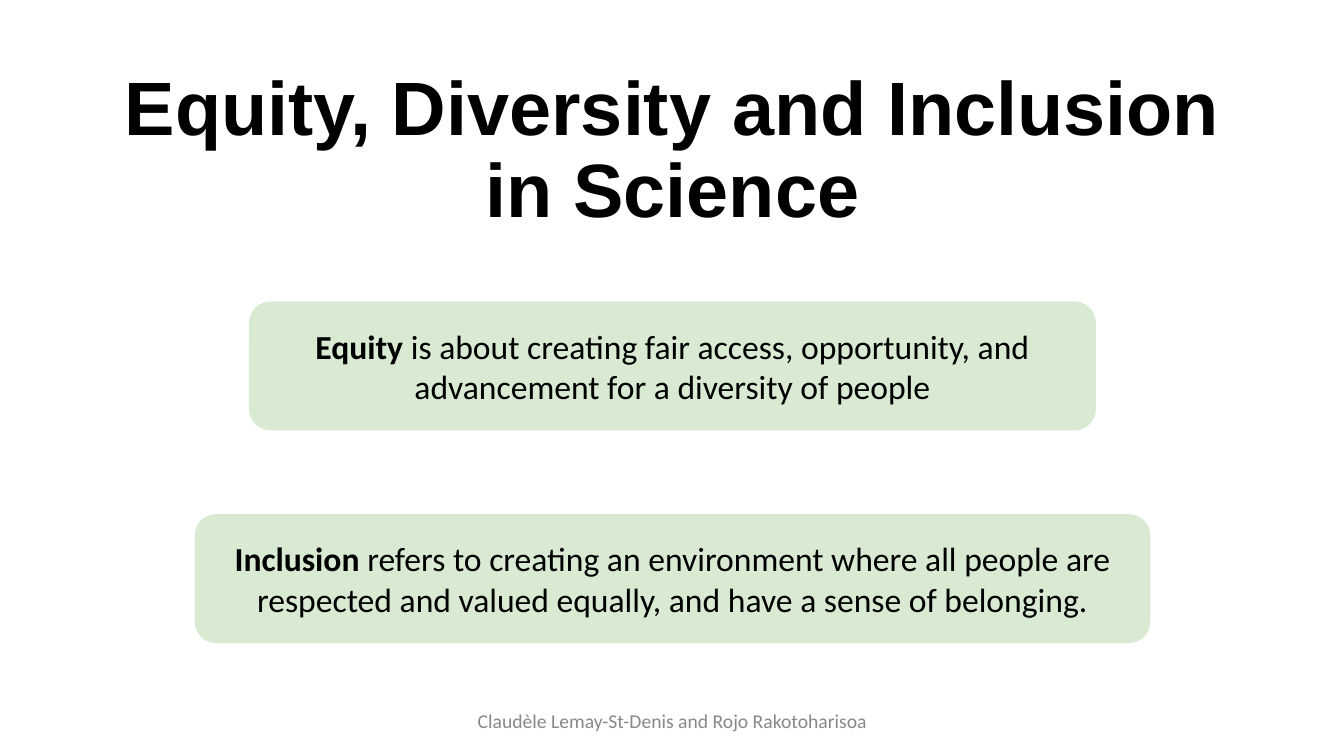
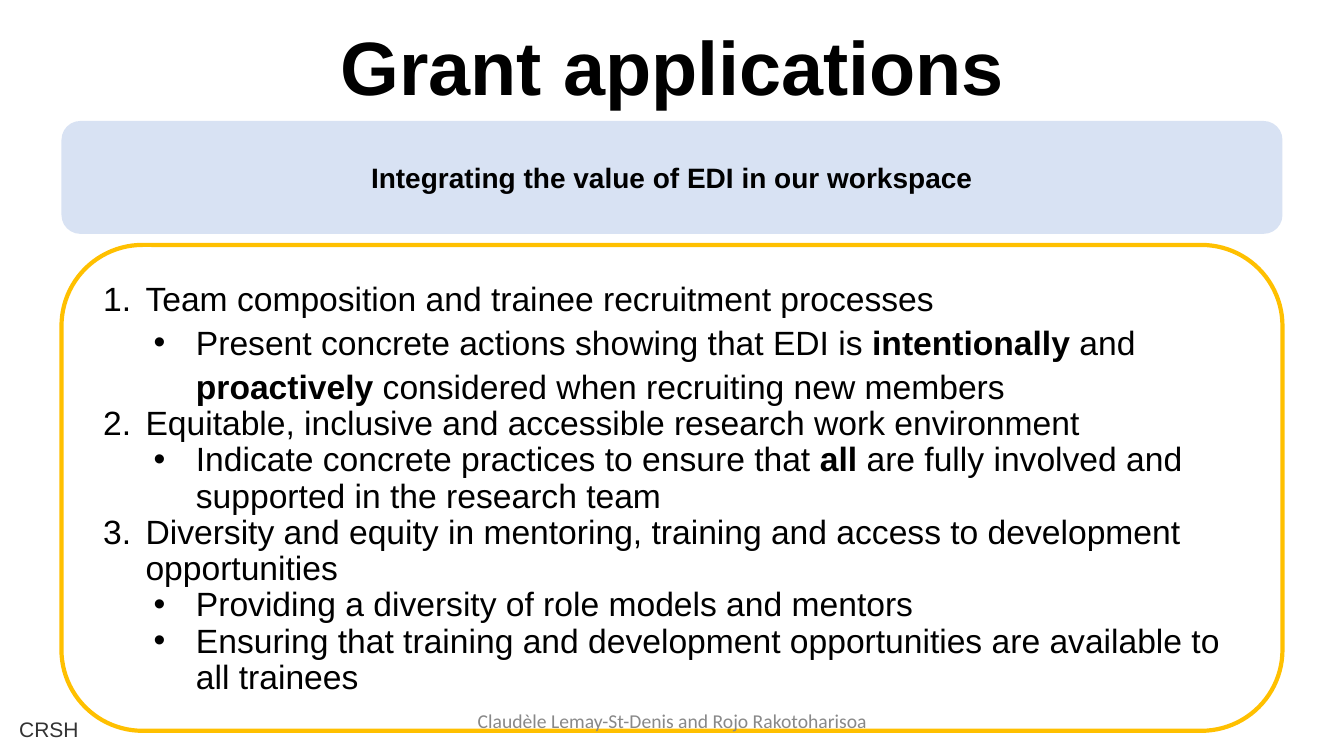
from dataclasses import dataclass
from pptx import Presentation
from pptx.dml.color import RGBColor
from pptx.enum.shapes import MSO_SHAPE
from pptx.enum.text import MSO_ANCHOR, PP_ALIGN
from pptx.oxml.ns import qn
from pptx.util import Pt
from lxml.etree import SubElement


@dataclass(frozen=True)
class Theme:
    head: str = "Arial"
    body: str = "Calibri"
    ink: str = "000000"
    gray: str = "888888"
    dark: str = "333333"
    green: str = "D9EAD3"
    blue: str = "D8E2F3"
    gold: str = "FFC000"
    title: int = 54
    text: int = 24
    band: int = 20
    note: int = 15
    foot: int = 14
    edge: int = 3


T = Theme()
PX = 9144  # 100 px to the inch
WIDE, HIGH = 1333, 750

# Asterisks enclose bold words.
FOOT = "Claudèle Lemay-St-Denis and Rojo Rakotoharisoa"
INTRO = ["Equity, Diversity and Inclusion", "in Science"]
TERMS = [
    (840, "*Equity* is about creating fair access, opportunity, and "
          "advancement for a diversity of people"),
    (948, "*Inclusion* refers to creating an environment where all people "
          "are respected and valued equally, and have a sense of belonging."),
]
GRANT = ["Grant applications"]
BAND = "*Integrating the value of EDI in our workspace*"
NOTE = "CRSH"
# Line spacing, topic, points
TOPICS = [
    (1.1, "Team composition and trainee recruitment processes",
     ["Present concrete actions showing that EDI is *intentionally* and "
      "*proactively* considered when recruiting new members"]),
    (0.9, "Equitable, inclusive and accessible research work environment",
     ["Indicate concrete practices to ensure that *all* are fully involved "
      "and supported in the research team"]),
    (0.9, "Diversity and equity in mentoring, training and access to "
          "development opportunities",
     ["Providing a diversity of role models and mentors",
      "Ensuring that training and development opportunities are available "
      "to all trainees"]),
]


def color(code):
    return RGBColor.from_string(code)


def write(para, text, size, face, ink=T.ink, align=PP_ALIGN.CENTER):
    """Fill a paragraph; text between asterisks is bold."""
    para.alignment = align
    for i, part in enumerate(text.split("*")):
        if part:
            run = para.add_run()
            run.text = part
            font = run.font
            font.size, font.name, font.bold = Pt(size), face, i % 2 == 1
            font.color.rgb = color(ink)


def setup(frame, anchor=MSO_ANCHOR.MIDDLE, pad=(10, 5)):
    frame.word_wrap = True
    frame.vertical_anchor = anchor
    frame.margin_left = frame.margin_right = pad[0] * PX
    frame.margin_top = frame.margin_bottom = pad[1] * PX
    return frame


def label(slide, box, **kind):
    area = slide.shapes.add_textbox(*(n * PX for n in box))
    return setup(area.text_frame, **kind)


def panel(slide, box, fill=None, line=None, **kind):
    shape = slide.shapes.add_shape(MSO_SHAPE.ROUNDED_RECTANGLE,
                                   *(n * PX for n in box))
    shape.shadow.inherit = False
    if fill:
        shape.fill.solid()
        shape.fill.fore_color.rgb = color(fill)
    else:
        shape.fill.background()
    if line:
        shape.line.color.rgb = color(line)
        shape.line.width = Pt(T.edge)
    else:
        shape.line.fill.background()
    return setup(shape.text_frame, **kind)


def paras(frame, count):
    """Give the frame's first paragraph, then new ones."""
    yield frame.paragraphs[0]
    for _ in range(count - 1):
        yield frame.add_paragraph()


def bullet(para, level):
    para.level = level
    props = para._p.get_or_add_pPr()
    props.set("marL", str((level + 1) * 50 * PX))
    props.set("indent", str(-42 * PX))
    tint = SubElement(props, qn("a:buClr"))
    SubElement(tint, qn("a:srgbClr"), val=T.ink)
    SubElement(props, qn("a:buFont"), typeface=T.head)
    if level:
        SubElement(props, qn("a:buChar"), char="•")
    else:
        SubElement(props, qn("a:buAutoNum"), type="arabicPeriod")


def title(slide, lines, box):
    frame = label(slide, box)
    for para, line in zip(paras(frame, len(lines)), lines):
        para.line_spacing = 0.9
        write(para, f"*{line}*", T.title, T.head)


def footer(slide):
    frame = label(slide, (442, 695, 450, 40))
    write(frame.paragraphs[0], FOOT, T.foot, T.body, T.gray)


def intro(slide):
    title(slide, INTRO, (93, 62, 1148, 178))
    for i, (width, text) in enumerate(TERMS):
        box = ((WIDE - width) // 2 + 1, 299 + i * 211, width, 128)
        frame = panel(slide, box, fill=T.green)
        write(frame.paragraphs[0], text, T.text, T.body)
    footer(slide)


def grant(slide):
    left, width = 61, 1211
    title(slide, GRANT, (92, -2, 1150, 145))
    frame = panel(slide, (left, 243, width, 482), line=T.gold,
                  anchor=MSO_ANCHOR.TOP)
    rows = [(gap, level, text) for gap, topic, points in TOPICS
            for level, text in [(0, topic)] + [(1, p) for p in points]]
    for para, (gap, level, text) in zip(paras(frame, len(rows)), rows):
        para.line_spacing = gap
        bullet(para, level)
        write(para, text, T.text, T.head, align=PP_ALIGN.LEFT)
    frame = panel(slide, (left, 120, width, 112), fill=T.blue)
    write(frame.paragraphs[0], BAND, T.band, T.head)
    frame = label(slide, (6, 698, 481, 52), anchor=MSO_ANCHOR.TOP,
                  pad=(13, 13))
    write(frame.paragraphs[0], NOTE, T.note, T.head, T.dark, PP_ALIGN.LEFT)
    footer(slide)


def main():
    deck = Presentation()
    deck.slide_width, deck.slide_height = WIDE * PX, HIGH * PX
    for draw in (intro, grant):
        draw(deck.slides.add_slide(deck.slide_layouts[6]))
    deck.save("out.pptx")


if __name__ == "__main__":
    main()
